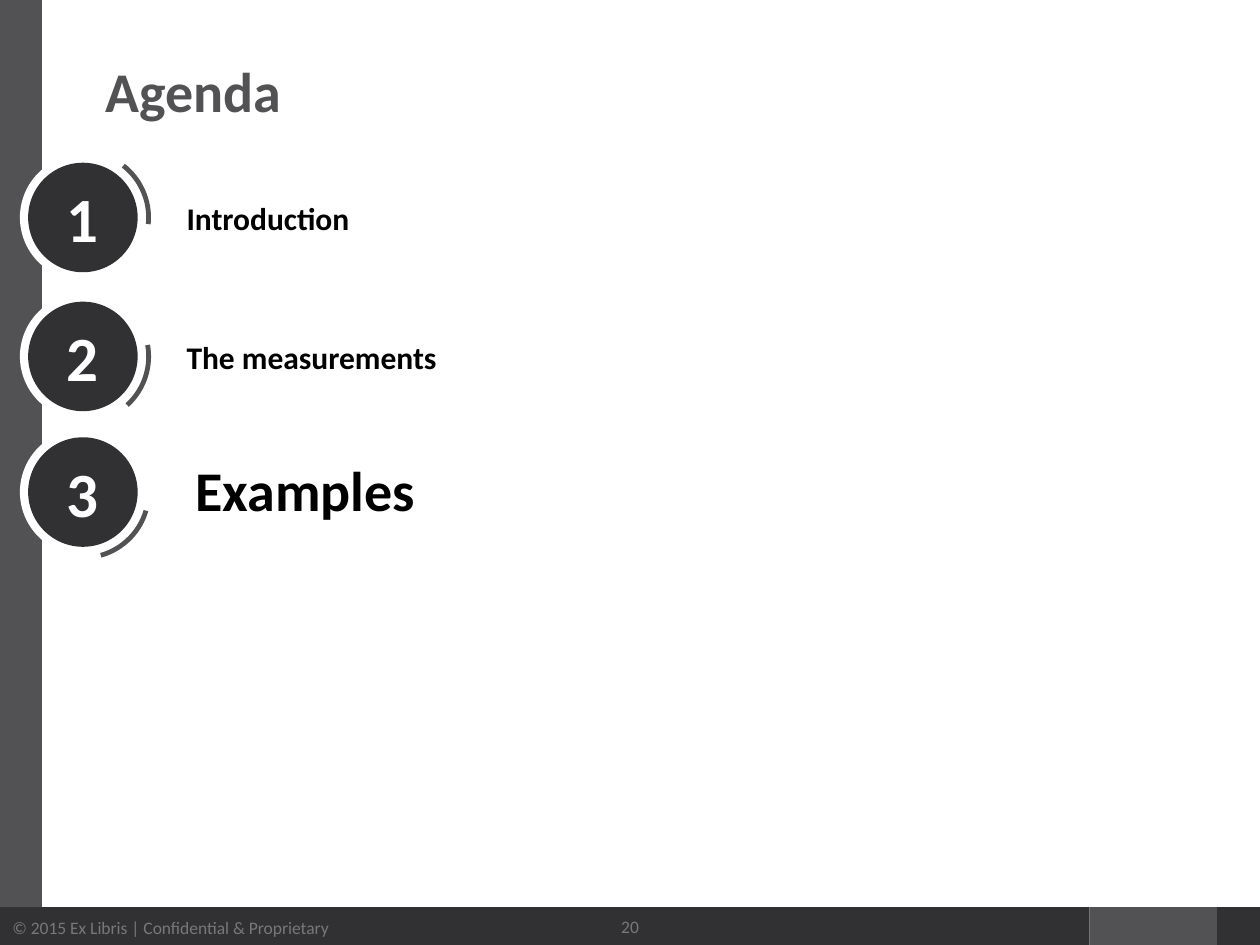
from pptx import Presentation
from pptx.dml.color import RGBColor
from pptx.enum import shapes, text
from pptx.util import Pt


def add_filled(parent, kind, left, top, width, height, color):
    shape = parent.shapes.add_shape(kind, Pt(left), Pt(top), Pt(width), Pt(height))
    shape.shadow.inherit = False
    shape.fill.solid()
    shape.fill.fore_color.rgb = RGBColor.from_string(color)
    shape.line.fill.background()
    return shape


def write(shape, content, size, color, bold=False, align=text.PP_ALIGN.LEFT,
          anchor=text.MSO_ANCHOR.MIDDLE):
    frame = shape.text_frame
    frame.text = content
    frame.word_wrap = True
    frame.auto_size = text.MSO_AUTO_SIZE.NONE
    frame.vertical_anchor = anchor
    paragraph = frame.paragraphs[0]
    paragraph.alignment = align
    font = paragraph.runs[0].font
    font.name, font.size, font.bold = "Calibri", Pt(size), bold
    font.color.rgb = RGBColor.from_string(color)
    return frame


DARK, GREY, MUTED, WHITE, BLACK = "313133", "525254", "787878", "FFFFFF", "000000"
RECTANGLE = shapes.MSO_SHAPE.RECTANGLE
OVAL = shapes.MSO_SHAPE.OVAL
CENTER = text.PP_ALIGN.CENTER

presentation = Presentation()
presentation.slide_width, presentation.slide_height = Pt(720), Pt(540)
slide = presentation.slides.add_slide(presentation.slide_layouts[5])

# Footer and side bar
footer = add_filled(slide, RECTANGLE, 0, 518.4, 622.5, 22.8, DARK)
write(footer, "© 2015 Ex Libris | Confidential & Proprietary", 10, MUTED)
add_filled(slide, RECTANGLE, 622.5, 518.4, 73, 22.8, GREY)
add_filled(slide, RECTANGLE, 695.5, 518.4, 24.5, 22.8, DARK)
add_filled(slide, RECTANGLE, 0, 0, 24, 518.4, GREY)

# Title
title = slide.shapes.title
title.left, title.top, title.width, title.height = Pt(53.3), Pt(33), Pt(612), Pt(85.7)
write(title, "Agenda", 32, GREY, bold=True, anchor=text.MSO_ANCHOR.TOP)
title.text_frame.paragraphs[0].line_spacing = 0.9

# Slide number
number = slide.shapes.add_textbox(Pt(318), Pt(515.5), Pt(84), Pt(28))
write(number, "20", 10, MUTED, align=CENTER)

# Agenda items: label, circle centre, arc rotation, label left and top, text size
items = [
    ("Introduction", 124.3, 5.1, 103, 99.4, 18),
    ("The measurements", 203.7, 47, 103, 178.8, 18),
    ("Examples", 281.2, 73.5, 108, 254.2, 32),
]
center_x = 47.4
for index, (label, center_y, rotation, left, top, size) in enumerate(items, start=1):
    badge = slide.shapes.add_group_shape()
    parts = []
    for kind, diameter, color in ((OVAL, 72, WHITE),
                                  (shapes.MSO_SHAPE.BLOCK_ARC, 77.8, GREY),
                                  (OVAL, 62.6, DARK)):
        parts.append(add_filled(badge, kind, center_x - diameter / 2,
                                center_y - diameter / 2, diameter, diameter, color))
    ring, arc, disc = parts
    arc.rotation = rotation
    for position, value in enumerate((181.725, 0.424, 0.035)):
        arc.adjustments[position] = value
    write(disc, str(index), 36, WHITE, bold=True, align=CENTER)

    box = slide.shapes.add_textbox(Pt(left), Pt(top), Pt(437), Pt(50.4))
    frame = write(box, label, size, BLACK, bold=True)
    frame.margin_left = frame.margin_right = Pt(3.6)
    frame.margin_top = frame.margin_bottom = Pt(3.6)

presentation.save("out.pptx")
